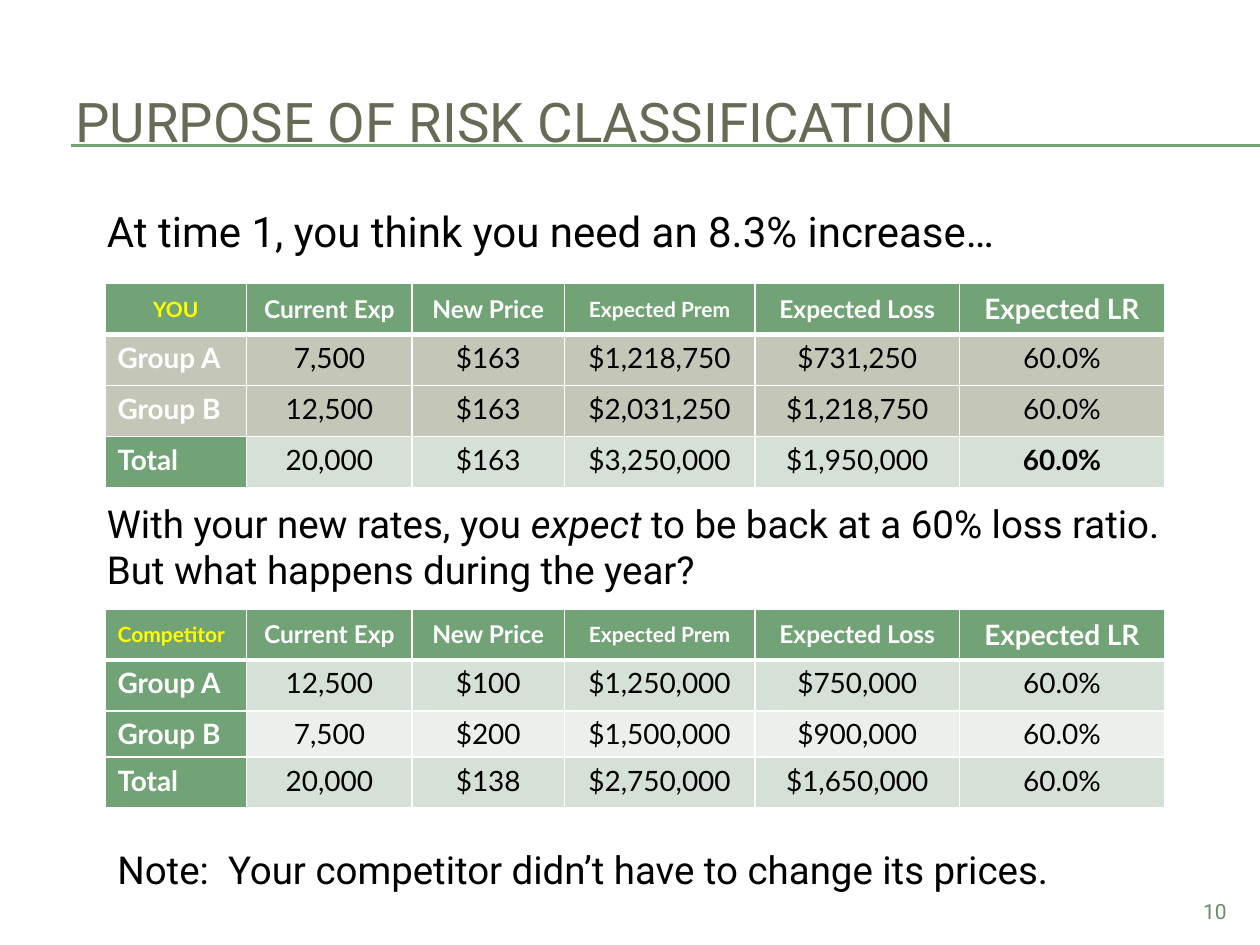
"""Build a slide with two risk classification tables on a 120 by 90 grid."""
from lxml import etree
from pptx import Presentation
from pptx.dml.color import RGBColor
from pptx.enum.shapes import MSO_CONNECTOR
from pptx.enum.text import MSO_ANCHOR, PP_ALIGN
from pptx.oxml.ns import qn
from pptx.util import Inches, Pt

LEFT, CENTER, RIGHT = PP_ALIGN.LEFT, PP_ALIGN.CENTER, PP_ALIGN.RIGHT
TOP, MIDDLE = MSO_ANCHOR.TOP, MSO_ANCHOR.MIDDLE
STRAIGHT = MSO_CONNECTOR.STRAIGHT
GREEN, PALE, PALER, TAUPE = "72A376", "D5E0D6", "EBF0EC", "C4C6B8"
WHITE, BLACK, YELLOW = "FFFFFF", "000000", "FFFF00"
UNIT = Inches(10) / 120


def rgb(value):
    return RGBColor.from_string(value)


def write(p, text, align, color, **fmt):
    p.alignment = align
    r = p.add_run()
    r.text = text
    r.font.color.rgb = rgb(color)
    for key, value in fmt.items():
        setattr(r.font, key, value)


prs = Presentation()
prs.slide_width, prs.slide_height = Inches(10), Inches(7.5)
slide = prs.slides.add_slide(prs.slide_layouts[6])

for row in (13.8, 13.9):
    x1, y, x2 = (int(n * UNIT) for n in (6.75, row, 120))
    line = slide.shapes.add_connector(STRAIGHT, x1, y, x2, y)
    line.line.color.rgb = rgb(GREEN)
    line.line.width = Pt(0.75)
    etree.SubElement(line._element.spPr, qn("a:effectLst"))

texts = [
    ((9, 19, 104, 6.1), TOP, LEFT, 24, BLACK,
     ["At time 1, you think you need an 8.3% increase…"]),
    ((6, 6, 114, 11), MIDDLE, LEFT, 31.2, "676A55",
     ["PURPOSE OF RISK CLASSIFICATION"]),
    ((9, 47, 104, 10), TOP, LEFT, 22, BLACK,
     ["With your new rates, you ", "expect",
      " to be back at a 60% loss ratio.  But what happens during the year?"]),
    ((10, 80, 104, 5.6), TOP, LEFT, 22, BLACK,
     ["Note:  Your competitor didn’t have to change its prices."]),
    ((108, 85, 10, 3.2), TOP, RIGHT, 12, "659068", ["10"]),
]
for box, anchor, align, size, color, runs in texts:
    sp = slide.shapes.add_textbox(*(int(n * UNIT) for n in box))
    tf = sp.text_frame
    tf.word_wrap = True
    tf.vertical_anchor = anchor
    for text in runs:
        write(tf.paragraphs[0], text, align, color, name="Roboto",
              size=Pt(size), italic=text == "expect")

cols = [13.5, 15.75, 14.5, 18.15, 19.5, 19.5]
heads = ["Current Exp", "New Price", "Expected Prem", "Expected Loss", "Expected LR"]
head_sizes = [12, 14, 14, 12, 14, 16]
tables = [
    (27, [4.86, 4.86, 4.86, 4.86], CENTER, [
        ["YOU", *heads],
        ["Group A", "7,500", "$163", "$1,218,750", "$731,250", "60.0%"],
        ["Group B", "12,500", "$163", "$2,031,250", "$1,218,750", "60.0%"],
        ["Total", "20,000", "$163", "$3,250,000", "$1,950,000", "60.0%"]],
     [GREEN, TAUPE, TAUPE, GREEN], [GREEN, TAUPE, TAUPE, PALE], (3, 5)),
    (58, [4.86, 4.86, 4.36, 4.86], LEFT, [
        ["Competitor", *heads],
        ["Group A", "12,500", "$100", "$1,250,000", "$750,000", "60.0%"],
        ["Group B", "7,500", "$200", "$1,500,000", "$900,000", "60.0%"],
        ["Total", "20,000", "$138", "$2,750,000", "$1,650,000", "60.0%"]],
     [GREEN] * 4, [GREEN, PALE, PALER, PALE], None),
]
for top, rows, corner_align, data, label_fills, fills, bold_cell in tables:
    box = (10, top, sum(cols), sum(rows))
    table = slide.shapes.add_table(4, 6, *(int(n * UNIT) for n in box)).table
    for col, width in zip(table.columns, cols):
        col.width = int(width * UNIT)
    for i, height in enumerate(rows):
        table.rows[i].height = int(height * UNIT)
        for j, text in enumerate(data[i]):
            cell = table.cell(i, j)
            head, label = i == 0, j == 0
            cell.vertical_anchor = MIDDLE if head else TOP
            tcPr = cell._tc.get_or_add_tcPr()
            for side in ("lnL", "lnR", "lnT", "lnB"):
                thick = (head and side == "lnB") or (i == 1 and side == "lnT")
                ln = etree.SubElement(tcPr, qn(f"a:{side}"), w=str(Pt(3 if thick else 1)))
                fill = etree.SubElement(ln, qn("a:solidFill"))
                etree.SubElement(fill, qn("a:srgbClr"), val=WHITE)
            cell.fill.solid()
            cell.fill.fore_color.rgb = rgb((label_fills if label else fills)[i])
            align = corner_align if head and label else LEFT if label else CENTER
            color = YELLOW if head and label else WHITE if head or label else BLACK
            write(cell.text_frame.paragraphs[0], text, align, color, name="Lato",
                  size=Pt(head_sizes[j] if head else 16),
                  bold=head or label or (i, j) == bold_cell)

prs.save("out.pptx")
